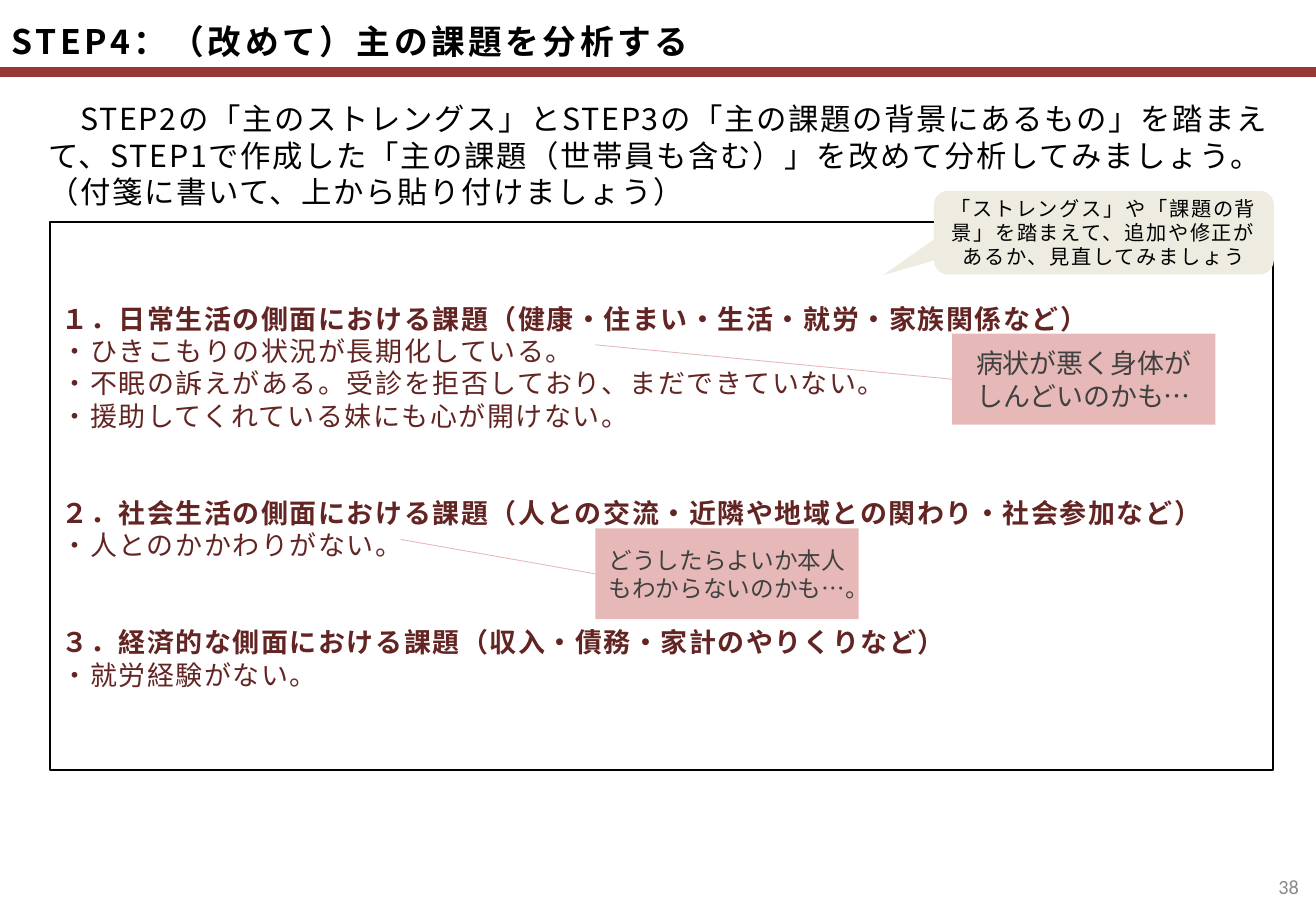
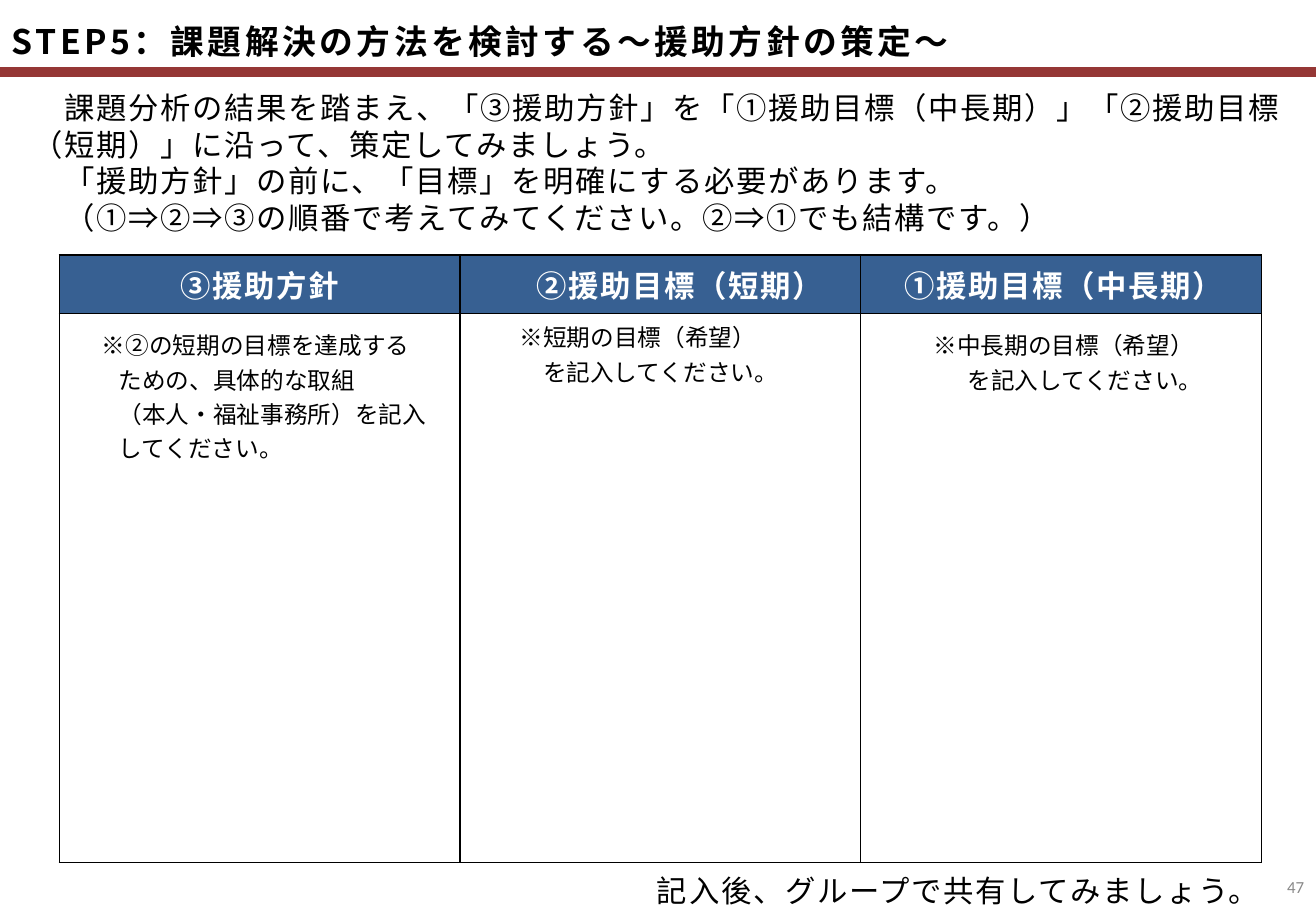
from lxml import etree
from pptx import Presentation
from pptx.dml.color import RGBColor
from pptx.enum.shapes import MSO_CONNECTOR, MSO_SHAPE
from pptx.enum.text import MSO_ANCHOR, MSO_AUTO_SIZE, PP_ALIGN
from pptx.oxml.ns import qn
from pptx.util import Cm, Pt

RECT = MSO_SHAPE.RECTANGLE
BUBBLE = MSO_SHAPE.ROUNDED_RECTANGULAR_CALLOUT
STRAIGHT = MSO_CONNECTOR.STRAIGHT
TOP, MIDDLE = MSO_ANCHOR.TOP, MSO_ANCHOR.MIDDLE
LEFT, CENTER, RIGHT = PP_ALIGN.LEFT, PP_ALIGN.CENTER, PP_ALIGN.RIGHT
NO_FIT = MSO_AUTO_SIZE.NONE

SANS, LATIN = "Noto Sans CJK JP", "Calibri"
BLACK, WHITE, GRAY, DARK = "000000", "FFFFFF", "898989", "404040"
RED, WINE, PINK = "953735", "632523", "E6B9B8"
BLUE, CREAM = "376092", "EEECE1"
WIDTH, HEIGHT, BAND = 27.52, 19.05, 1.5
LEAD = 1.2

ISSUES = [
    ("１．日常生活の側面における課題（健康・住まい・生活・就労・家族関係など）",
     ["・ひきこもりの状況が長期化している。",
      "・不眠の訴えがある。受診を拒否しており、まだできていない。",
      "・援助してくれている妹にも心が開けない。"]),
    ("２．社会生活の側面における課題（人との交流・近隣や地域との関わり・社会参加など）",
     ["・人とのかかわりがない。"]),
    ("３．経済的な側面における課題（収入・債務・家計のやりくりなど）",
     ["・就労経験がない。"]),
]

PLANS = [
    ("③援助方針", CENTER, 0, 0.29,
     [("※②の短期の目標を達成する", 18), ("ための、具体的な取組", 28),
      ("（本人・福祉事務所）を記入", 28), ("してください。", 28)]),
    ("②援助目標（短期）", LEFT, 38, 0.13,
     [("※短期の目標（希望）", 28), ("を記入してください。", 42)]),
    ("①援助目標（中長期）", LEFT, 19, 0.29,
     [("※中長期の目標（希望）", 36), ("を記入してください。", 56)]),
]


def color(code):
    """Turn a hex string into a colour."""
    return RGBColor.from_string(code)


def style(par, size, ink=BLACK, bold=False, gap=0, align=LEFT, face=SANS, lead=LEAD):
    """Format a paragraph, with letter gap in points."""
    par.alignment = align
    if lead:
        par.line_spacing = Pt(size * lead)
    font = par.font
    font.size, font.bold, font.name = Pt(size), bold, face
    font.color.rgb = color(ink)
    props = par._p.pPr.find(qn("a:defRPr"))
    props.set("spc", str(gap * 100))
    east = etree.Element(qn("a:ea"), typeface=face)
    props.find(qn("a:latin")).addnext(east)


def indent(par, left, first=0):
    """Set the left margin and first-line indent in points."""
    props = par._p.get_or_add_pPr()
    props.set("marL", str(Pt(left)))
    props.set("indent", str(Pt(first)))


def write(frame, lines, size, **look):
    """Write lines as paragraphs of one style and return them."""
    frame.text = "\n".join(lines)
    for par in frame.paragraphs:
        style(par, size, **look)
    return frame.paragraphs


def label(slide, place, lines, size, anchor=TOP, **look):
    """Add a wrapped text box and return its paragraphs."""
    box = slide.shapes.add_textbox(*map(Cm, place))
    frame = box.text_frame
    frame.word_wrap, frame.vertical_anchor = True, anchor
    return write(frame, lines, size, **look)


def panel(slide, place, fill, kind=RECT, edge=None):
    """Add a flat filled shape."""
    shape = slide.shapes.add_shape(kind, *map(Cm, place))
    shape.shadow.inherit = False
    shape.fill.solid()
    shape.fill.fore_color.rgb = color(fill)
    if edge:
        shape.line.color.rgb = color(edge)
        shape.line.width = Pt(1)
    else:
        shape.line.fill.background()
    shape.text_frame.word_wrap = True
    shape.text_frame.vertical_anchor = MIDDLE
    return shape


def rule(slide, ends, ink, width):
    """Add a straight line without shadow."""
    line = slide.shapes.add_connector(STRAIGHT, *map(Cm, ends))
    line.line.color.rgb = color(ink)
    line.line.width = Pt(width)
    etree.SubElement(line._element.spPr, qn("a:effectLst"))
    return line


def note(slide, left, top, lines, size, tip):
    """Add a pink note with a line from its left side to the tip."""
    shape = panel(slide, (left, top, 5.51, 1.9), PINK)
    write(shape.text_frame, lines, size, ink=DARK, align=CENTER)
    line = rule(slide, (left, top, *tip), PINK, 0.5)
    line.begin_connect(shape, 1)


def start(deck, title, page, edge, size):
    """Add a slide with title, band and page number."""
    slide = deck.slides.add_slide(deck.slide_layouts[5])
    rule(slide, (0, BAND, WIDTH, BAND), RED, 6)
    head = slide.shapes.title
    head.left, head.top, head.width, head.height = map(Cm, (0, 0, 26.77, BAND))
    frame = head.text_frame
    frame.auto_size, frame.vertical_anchor = NO_FIT, MIDDLE
    frame.word_wrap = True
    frame.margin_left = frame.margin_right = Cm(0.25)
    frame.margin_top, frame.margin_bottom = Cm(0.2), 0
    write(frame, [title], 20, bold=True, gap=2)
    label(slide, (edge - 1.07, 18.03, 1.07, 1.02), [page], size, MIDDLE,
          ink=GRAY, align=RIGHT, face=LATIN)
    return slide


def issues(slide):
    """Add the framed list of issues."""
    frame = panel(slide, (1.04, 4.65, 25.58, 11.46), WHITE, edge=BLACK).text_frame
    heads = [head for head, _ in ISSUES]
    lines = [line for head, rows in ISSUES for line in (head, *rows)]
    for par in write(frame, lines, 16, ink=WINE, gap=1):
        par.font.bold = par.text in heads
        if par.text in heads[1:]:
            par.space_before = Pt(2 * 16 * LEAD)


def border(cell):
    """Draw a thin black line on all sides of a cell."""
    props = cell._tc.get_or_add_tcPr()
    for side in ("lnL", "lnR", "lnT", "lnB"):
        line = etree.SubElement(props, qn("a:" + side), w=str(Pt(1)))
        fill = etree.SubElement(line, qn("a:solidFill"))
        etree.SubElement(fill, qn("a:srgbClr"), val=BLACK)


def plans(slide):
    """Add the table of plans and goals."""
    width, heights = 8.38, (1.22, 11.48)
    place = (1.24, 5.33, width * len(PLANS), sum(heights))
    table = slide.shapes.add_table(2, len(PLANS), *map(Cm, place)).table
    table.horz_banding = False
    for row, height in zip(table.rows, heights):
        row.height = Cm(height)
    for col, (title, align, left, top, rows) in enumerate(PLANS):
        table.columns[col].width = Cm(width)
        head, body = table.cell(0, col), table.cell(1, col)
        for cell, fill in ((head, BLUE), (body, WHITE)):
            border(cell)
            cell.fill.solid()
            cell.fill.fore_color.rgb = color(fill)
        head.vertical_anchor = MIDDLE
        pars = write(head.text_frame, [title], 18, ink=WHITE, bold=True,
                     gap=1, align=align, lead=None)
        indent(pars[0], left)
        body.margin_top = Cm(top)
        pars = write(body.text_frame, [text for text, _ in rows], 14, lead=None)
        for par, (_, shift) in zip(pars, rows):
            indent(par, shift)


def review(deck):
    """Build the slide that reviews the issues."""
    slide = start(deck, "STEP4：（改めて）主の課題を分析する", "38", 27.41, 12)
    issues(slide)
    pars = label(slide, (0.76, 1.98, 26.01, 2.57), [
        "STEP2の「主のストレングス」とSTEP3の「主の課題の背景にあるもの」を踏まえて、"
        "STEP1で作成した「主の課題（世帯員も含む）」を改めて分析してみましょう。"
        "（付箋に書いて、上から貼り付けましょう）"], 18, gap=1)
    indent(pars[0], 0, 19)
    note(slide, 19.91, 6.98, ["病状が悪く身体が", "しんどいのかも…"], 16, (12.45, 7.21))
    note(slide, 12.45, 11.05, ["どうしたらよいか本人もわからないのかも…。"], 14, (8.38, 11.28))
    bubble = panel(slide, (19.53, 3.99, 7.11, 1.75), CREAM, BUBBLE)
    for spot, value in enumerate((-0.65, 0.51, 0.17)):
        bubble.adjustments[spot] = value
    write(bubble.text_frame,
          ["「ストレングス」や「課題の背景」を踏まえて、追加や修正があるか、見直してみましょう"],
          12, gap=1, align=CENTER)


def policy(deck):
    """Build the slide that sets goals and policy."""
    slide = start(deck, "STEP5：課題解決の方法を検討する～援助方針の策定～", "47", WIDTH, 10)
    plans(slide)
    pars = label(slide, (0.43, 1.75, 26.77, 3.33), [
        "課題分析の結果を踏まえ、「③援助方針」を「①援助目標（中長期）」"
        "「②援助目標（短期）」に沿って、策定してみましょう。",
        "「援助方針」の前に、「目標」を明確にする必要があります。",
        "（①⇒②⇒③の順番で考えてみてください。②⇒①でも結構です。）"], 18, gap=1)
    for par in pars:
        indent(par, 0, 19)
    label(slide, (13.49, 18.11, 13.49, 1.02),
          ["記入後、グループで共有してみましょう。"], 18, MIDDLE, gap=1)


def main():
    """Build and save the deck."""
    deck = Presentation()
    deck.slide_width, deck.slide_height = Cm(WIDTH), Cm(HEIGHT)
    review(deck)
    policy(deck)
    deck.save("out.pptx")


if __name__ == "__main__":
    main()
